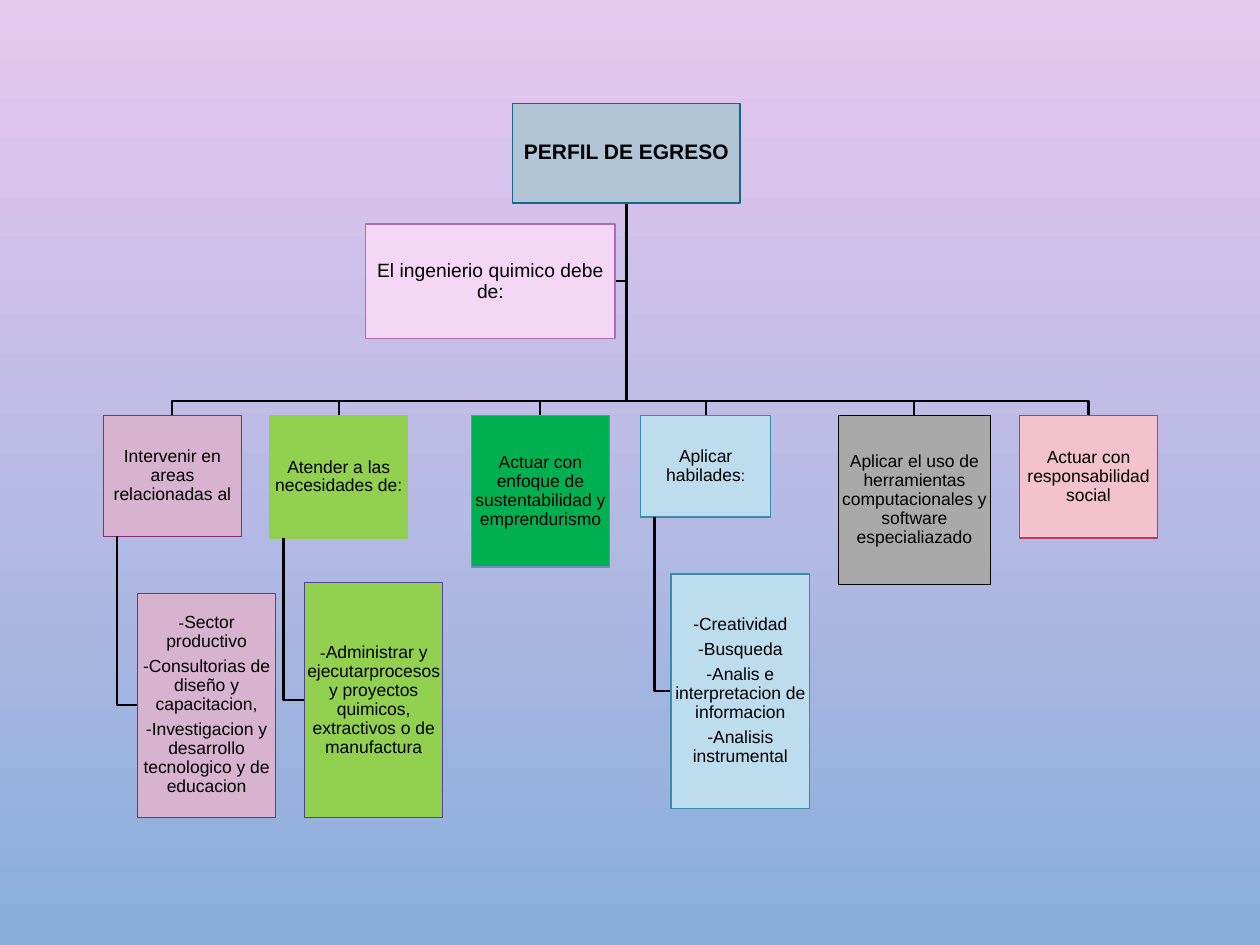
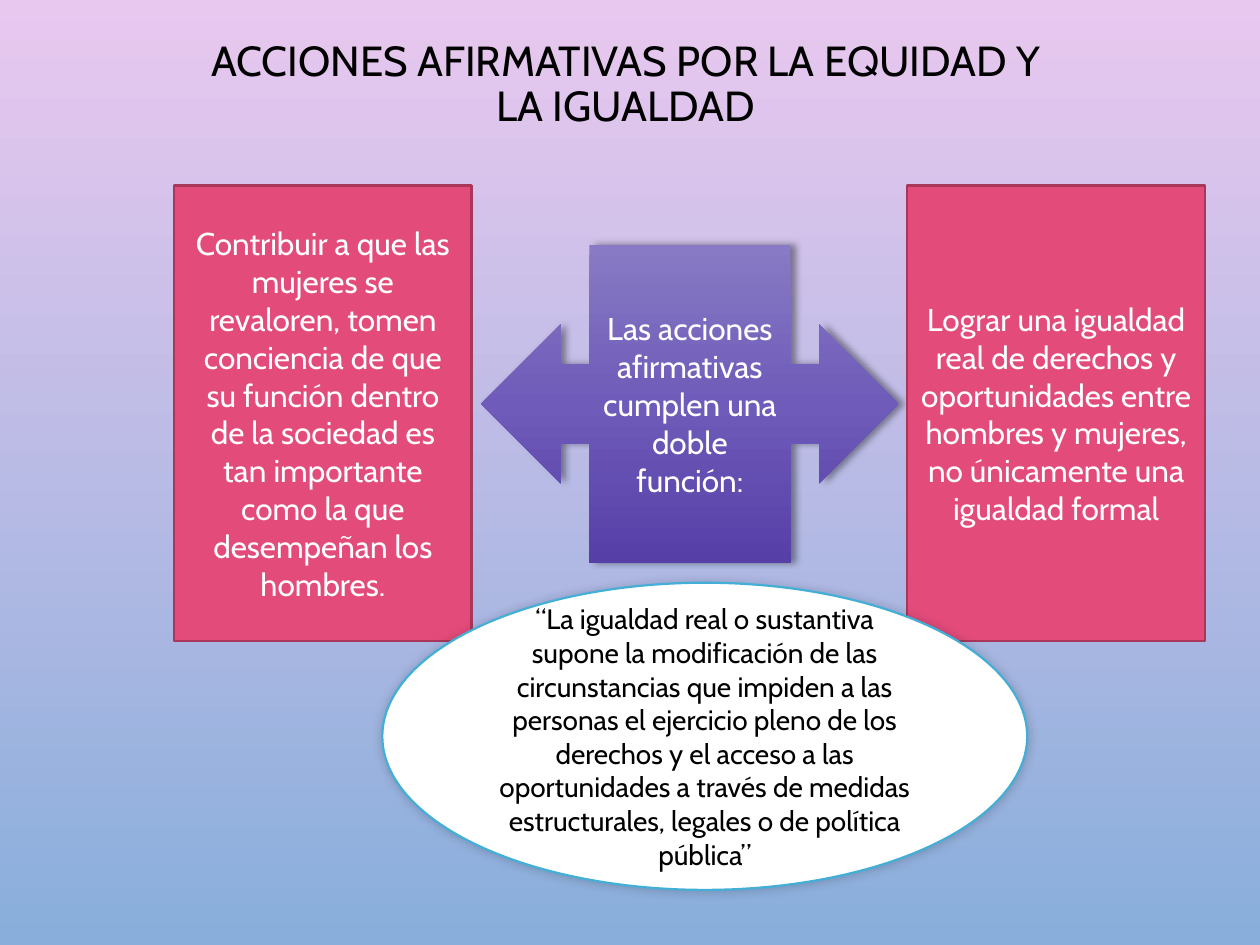
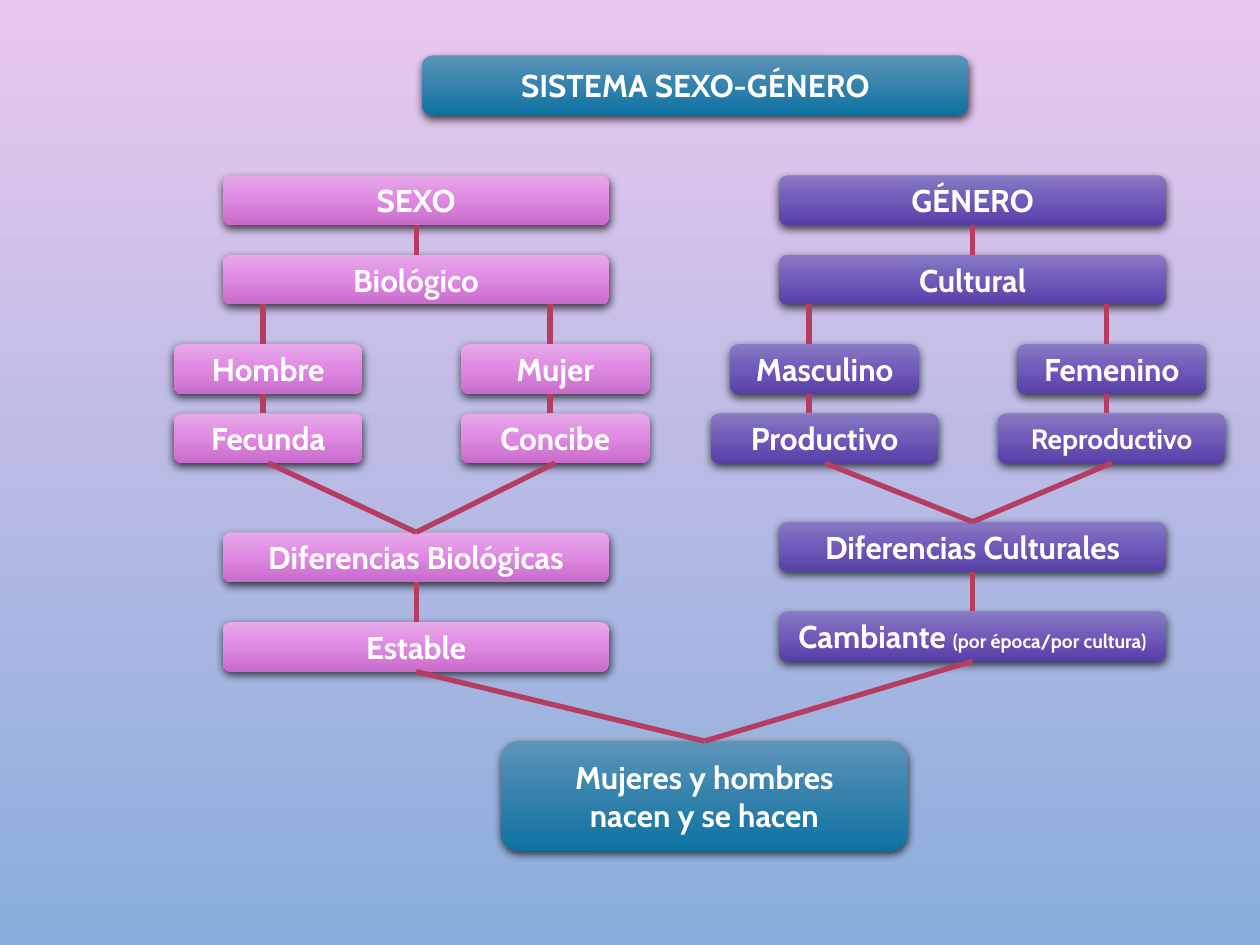
from collections import namedtuple
from copy import deepcopy
from dataclasses import dataclass

from lxml import etree
from pptx import Presentation
from pptx.dml.color import RGBColor
from pptx.enum.shapes import MSO_CONNECTOR, MSO_SHAPE
from pptx.enum.text import MSO_ANCHOR, PP_ALIGN
from pptx.oxml.ns import qn
from pptx.util import Pt

RECT = MSO_SHAPE.RECTANGLE
ROUNDED = MSO_SHAPE.ROUNDED_RECTANGLE
ELLIPSE = MSO_SHAPE.OVAL
TWO_WAY_CALLOUT = MSO_SHAPE.LEFT_RIGHT_ARROW_CALLOUT
STRAIGHT = MSO_CONNECTOR.STRAIGHT
CENTER = PP_ALIGN.CENTER
MIDDLE = MSO_ANCHOR.MIDDLE
TOP, BOTTOM = 0, 2
DOWNWARD = 270

Box = namedtuple("Box", "x y w h")
Shadow = namedtuple("Shadow", "opacity blur distance angle")
Branch = namedtuple("Branch", "x w h text fill line detail", defaults=[None])
Detail = namedtuple("Detail", "x y h paragraphs line")


@dataclass(frozen=True)
class Theme:
    black: str = "000000"
    white: str = "FFFFFF"
    background: tuple = ("E9C8EF", "89AEDB")
    blue: tuple = ("5D94B8", "3582AD", "0D72A1")
    pink: tuple = ("E7A8E9", "DF89E2", "C86BCB")
    purple: tuple = ("887AC4", "6F5BB9", "563FA7")
    crimson: str = "B63C62"
    panel: str = "E34B7A"
    panel_line: str = "A8375A"
    quote_line: str = "43AFD6"
    mauve: str = "D8B3D0"
    mauve_line: str = "8A297B"
    lime: str = "92D050"
    violet_line: str = "544293"
    sky: str = "BDDDEE"
    sky_line: str = "368CAB"
    font: str = "Cabin"
    chart_font: str = "Arial"
    title_size: float = 24
    body_size: float = 18
    quote_size: float = 16
    root_size: float = 12
    note_size: float = 11
    chart_size: float = 10
    dash_size: float = 8
    chart_inset: float = 0.7
    raised: Shadow = Shadow(69, 5, 2, 90)
    callout: Shadow = Shadow(40, 4, 3, 0)
    glow: Shadow = Shadow(20, 6, 0, 315)


THEME = Theme()
DASH = ("-", dict(size=THEME.dash_size, font=THEME.font))


def rgb(code):
    return RGBColor.from_string(code)


def points(*lengths):
    return [Pt(length) for length in lengths]


def write(frame, paragraphs, size=THEME.body_size, font=THEME.font, color=THEME.white,
          bold=False, line_spacing=None, space_after=None, inset=None):
    """Fill a frame; a paragraph is a string or a list of (text, overrides) runs."""
    frame.word_wrap = True
    frame.vertical_anchor = MIDDLE
    if inset is not None:
        frame.margin_left = frame.margin_right = Pt(inset)
        frame.margin_top = frame.margin_bottom = Pt(inset)
    if isinstance(paragraphs, str):
        paragraphs = [paragraphs]
    for index, content in enumerate(paragraphs):
        paragraph = frame.add_paragraph() if index else frame.paragraphs[0]
        paragraph.alignment = CENTER
        if line_spacing:
            paragraph.line_spacing = line_spacing
        if space_after:
            paragraph.space_after = Pt(space_after)
        for text, overrides in [(content, {})] if isinstance(content, str) else content:
            run = paragraph.add_run()
            run.text = text
            run.font.size = Pt(overrides.get("size", size))
            run.font.name = overrides.get("font", font)
            run.font.bold = bold
            run.font.color.rgb = rgb(color)


def paint_gradient(fill, colors, owner):
    fill.gradient()
    fill.gradient_angle = DOWNWARD
    stops = next(owner.iter(qn("a:gsLst")))
    for _ in colors[2:]:
        stops.insert(1, deepcopy(stops[0]))
    for index, (stop, color) in enumerate(zip(fill.gradient_stops, colors)):
        stop.position = index / (len(colors) - 1)
        stop.color.rgb = rgb(color)


def cast_shadow(shape, shadow):
    effects = shape._element.spPr.find(qn("a:effectLst"))
    outer = etree.SubElement(
        effects, qn("a:outerShdw"), blurRad=str(Pt(shadow.blur)),
        dist=str(Pt(shadow.distance)), dir=str(shadow.angle * 60000), rotWithShape="0")
    color = etree.SubElement(outer, qn("a:srgbClr"), val=THEME.black)
    etree.SubElement(color, qn("a:alpha"), val=str(shadow.opacity * 1000))


def add_block(slide, kind, box, text, fill, line=None, line_width=1.25, shadow=None,
              **text_format):
    block = slide.shapes.add_shape(kind, *points(*box))
    block.shadow.inherit = False
    if isinstance(fill, tuple):
        paint_gradient(block.fill, fill, block._element)
    else:
        block.fill.solid()
        block.fill.fore_color.rgb = rgb(fill)
    if line:
        block.line.color.rgb = rgb(line)
        block.line.width = Pt(line_width)
    else:
        block.line.fill.background()
    if shadow:
        cast_shadow(block, shadow)
    write(block.text_frame, text, **text_format)
    return block


def add_route(slide, *corners):
    """Draw an open line with right-angled bends."""
    start, *rest = [points(*corner) for corner in corners]
    builder = slide.shapes.build_freeform(*start)
    builder.add_line_segments(rest, close=False)
    route = builder.convert_to_shape()
    route.shadow.inherit = False
    route.fill.background()
    route.line.color.rgb = rgb(THEME.black)
    route.line.width = Pt(1.25)


def add_link(slide, start=(0, 0), end=(0, 0)):
    link = slide.shapes.add_connector(STRAIGHT, *points(*start, *end))
    link.line.color.rgb = rgb(THEME.crimson)
    link.line.width = Pt(3)
    etree.SubElement(link._element.spPr, qn("a:effectLst"))
    return link


def join(slide, upper, lower):
    link = add_link(slide)
    link.begin_connect(upper, BOTTOM)
    link.end_connect(lower, TOP)


BRANCHES = [
    Branch(0, 79, 69, "Intervenir en areas relacionadas al", THEME.mauve, THEME.mauve_line,
           Detail(19.5, 101.5, 128, [
               [DASH, ("Sector productivo", {})],
               "-Consultorias de diseño y capacitacion,",
               "-Investigacion y desarrollo tecnologico y de educacion",
           ], THEME.mauve_line)),
    Branch(95, 79, 70, "Atender a las necesidades de:", THEME.lime, THEME.lime,
           Detail(20, 95.5, 134, [
               [DASH, ("Administrar y ejecutarprocesos y proyectos quimicos, "
                       "extractivos o de manufactura", {})],
           ], THEME.violet_line)),
    Branch(210.3, 79, 86.5, "Actuar con enfoque de sustentabilidad y emprendurismo",
           "00B050", "698CB8"),
    Branch(307, 74.5, 58, [[("Aplicar habilades", {}), (":", {"size": 9})]],
           THEME.sky, THEME.sky_line,
           Detail(17.5, 90.5, 134, [
               "-Creatividad", "-Busqueda", "-Analis e interpretacion de informacion",
               "-Analisis instrumental",
           ], THEME.sky_line)),
    Branch(420, 87, 96.5,
           "Aplicar el uso de herramientas computacionales y software especialiazado",
           "A9A9A9", THEME.black),
    Branch(523.5, 79, 70, "Actuar con responsabilidad social", "F4C2CD", THEME.crimson),
]


def profile_chart(slide, area):
    def node(box, text, fill, line, size=THEME.chart_size, bold=False):
        add_block(slide, RECT, box, text, fill, line, 0.75, size=size, bold=bold,
                  font=THEME.chart_font, color=THEME.black, line_spacing=0.9,
                  space_after=0.35 * size, inset=THEME.chart_inset)

    root = Box(area.x + 234, area.y, 130, 57)
    note = Box(area.x + 150, area.y + 69, 142.5, 65.5)
    trunk_x = root.x + root.w / 2
    root_bottom = root.y + root.h
    bus_y, branch_y = area.y + 170, area.y + 178.5
    note_y = note.y + note.h / 2

    add_route(slide, (trunk_x, root_bottom), (trunk_x, note_y), (note.x + note.w, note_y))
    for branch in BRANCHES:
        box = Box(area.x + branch.x, branch_y, branch.w, branch.h)
        middle = box.x + box.w / 2
        add_route(slide, (trunk_x, root_bottom), (trunk_x, bus_y), (middle, bus_y),
                  (middle, branch_y))
        node(box, branch.text, branch.fill, branch.line)
        if branch.detail:
            detail = branch.detail
            leaf = Box(box.x + detail.x, box.y + detail.y, 79, detail.h)
            stem_x, leaf_y = box.x + 8, leaf.y + leaf.h / 2
            add_route(slide, (stem_x, box.y + box.h), (stem_x, leaf_y), (leaf.x, leaf_y))
            node(leaf, detail.paragraphs, branch.fill, detail.line)
    node(root, "PERFIL DE EGRESO", "B1C5D7", "176589", THEME.root_size, bold=True)
    node(note, "El ingenierio quimico debe de:", "F4D7F5", "B26BB4", THEME.note_size)


def slide_title(slide, box, text):
    title = slide.shapes.title
    title.left, title.top, title.width, title.height = points(*box)
    write(title.text_frame, text, size=THEME.title_size, color=THEME.black, line_spacing=0.9)


def double_purpose(slide, area):
    """Two panels at the sides of a two-way arrow, with a quotation below."""
    panel_w, panel_h = 170, 260.5
    add_block(slide, TWO_WAY_CALLOUT, Box(area.x + 175.5, area.y + 34, 238.5, 181.5),
              "Las acciones afirmativas cumplen una doble función:",
              THEME.purple, shadow=THEME.callout)
    panels = [
        (area.x, "Contribuir a que las mujeres se revaloren, tomen conciencia de que su "
                 "función dentro de la sociedad es tan importante como la que desempeñan "
                 "los hombres."),
        (area.x + area.w - panel_w, "Lograr una igualdad real de derechos y oportunidades "
                                    "entre hombres y mujeres, no únicamente una igualdad "
                                    "formal"),
    ]
    for x, purpose in panels:
        add_block(slide, RECT, Box(x, area.y, panel_w, panel_h), purpose,
                  THEME.panel, THEME.panel_line)
    quote_h = 175.5
    add_block(slide, ELLIPSE, Box(area.x + 119, area.y + area.h - quote_h, 368.5, quote_h),
              "“La igualdad real o sustantiva supone la modificación de las circunstancias "
              "que impiden a las personas el ejercicio pleno de los derechos y el acceso a "
              "las oportunidades a través de medidas estructurales, legales o de política "
              "pública”",
              THEME.white, THEME.quote_line, shadow=THEME.glow,
              size=THEME.quote_size, color=THEME.black)


def raised_block(slide, box, text, fill, size=THEME.body_size):
    return add_block(slide, ROUNDED, box, text, fill, shadow=THEME.raised, size=size, bold=True)


def concept_column(slide, area, fill, heading, origin, people, roles, differences, nature,
                   stems, differences_y, role_w=108, role_sizes=(18, 18)):
    """Stack a concept from heading to nature and return its last block."""
    row_h, person_w = 28.4, 108
    people_y, roles_y = 96.5, 136
    pair_centers = (26, 190)

    def wide(y, text):
        return raised_block(slide, Box(area.x, area.y + y, area.w, row_h), text, fill)

    def narrow(center, y, w, text, size=THEME.body_size):
        box = Box(area.x + center - w / 2, area.y + y, w, row_h)
        return raised_block(slide, box, text, fill, size)

    heading_block, origin_block = wide(0, heading), wide(45.4, origin)
    differences_block = wide(differences_y, differences)
    nature_block = wide(differences_y + 51.2, nature)
    join(slide, heading_block, origin_block)
    for center, stem, person, role, size in zip(pair_centers, stems, people, roles, role_sizes):
        narrow(center, people_y, person_w, person)
        role_block = narrow(center, roles_y, role_w, role, size)
        x = area.x + stem
        for start, end in ((45.4 + row_h, people_y), (people_y + row_h, roles_y)):
            add_link(slide, (x, area.y + start), (x, area.y + end))
        join(slide, role_block, differences_block)
    join(slide, differences_block, nature_block)
    return nature_block


def gender_system(slide, area):
    raised_block(slide, Box(area.x + 142, area.y, 312, 34), "SISTEMA SEXO-GÉNERO", THEME.blue)
    column_y, column_w, column_h = area.y + 68.5, 221, 283.5
    sex = concept_column(
        slide, Box(area.x + 28, column_y, column_w, column_h), THEME.pink,
        "SEXO", "Biológico", ("Hombre", "Mujer"), ("Fecunda", "Concibe"),
        "Diferencias Biológicas", "Estable", stems=(23, 187), differences_y=204)
    gender = concept_column(
        slide, Box(area.x + 346, column_y, column_w, column_h), THEME.purple,
        "GÉNERO", "Cultural", ("Masculino", "Femenino"), ("Productivo", "Reproductivo"),
        "Diferencias Culturales",
        [[("Cambiante ", {}), ("(por época/por cultura)", {"size": 11})]],
        stems=(17, 187), differences_y=198, role_w=130, role_sizes=(18, 16))
    result_h = 62.5
    result = raised_block(
        slide, Box(area.x + 187, area.y + area.h - result_h, 232.5, result_h),
        ["Mujeres y hombres", "nacen y se hacen"], THEME.blue)
    for nature in (sex, gender):
        join(slide, nature, result)


def main():
    deck = Presentation()
    deck.slide_width, deck.slide_height = points(720, 540)
    master = deck.slide_master
    paint_gradient(master.background.fill, THEME.background, master._element)
    title_only, blank = deck.slide_layouts[5], deck.slide_layouts[6]

    profile_chart(deck.slides.add_slide(blank), Box(59, 59, 602.5, 408.5))

    actions = deck.slides.add_slide(title_only)
    slide_title(actions, Box(99.5, 15, 516, 67.5),
                "ACCIONES AFIRMATIVAS POR LA EQUIDAD Y LA IGUALDAD")
    double_purpose(actions, Box(99.5, 106, 589, 402.5))

    gender_system(deck.slides.add_slide(blank), Box(99.3, 31.7, 601, 454.3))
    deck.save("out.pptx")


if __name__ == "__main__":
    main()
